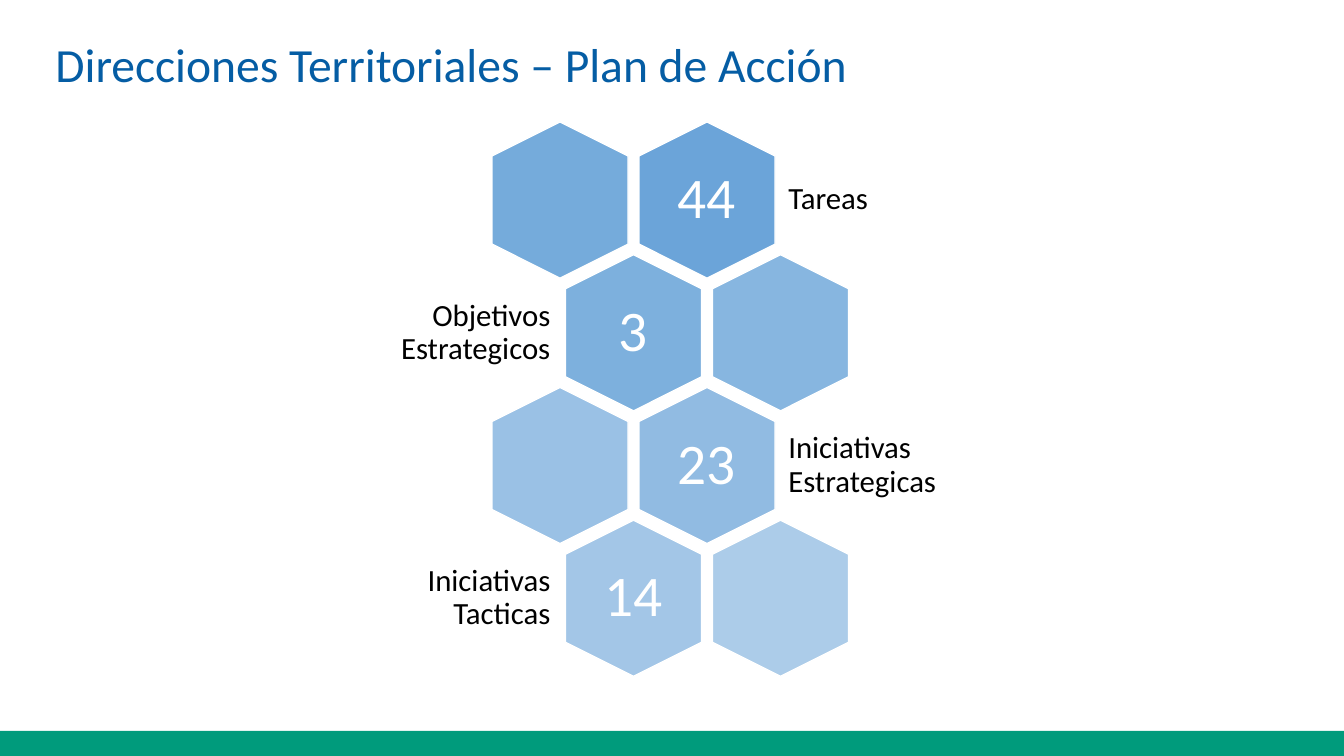
import pptx
import pptx.util
import pptx.dml.color
import pptx.enum.shapes
import pptx.enum.text
import pptx.oxml
import pptx.oxml.ns

Pt = pptx.util.Pt
RGB = pptx.dml.color.RGBColor
SHAPE = pptx.enum.shapes.MSO_SHAPE
ALIGN = pptx.enum.text.PP_ALIGN
ANCHOR = pptx.enum.text.MSO_ANCHOR
qn = pptx.oxml.ns.qn

GREEN = RGB(0x00, 0x9B, 0x7C)
NAVY = RGB(0x05, 0x5D, 0xA4)
TITLE_OUTLINE = RGB(0x32, 0x85, 0x9C)
BLUE = RGB(0x5B, 0x9B, 0xD5)
WHITE = RGB(0xFF, 0xFF, 0xFF)
BLACK = RGB(0x00, 0x00, 0x00)

FONT = "Calibri"
HEX_W, HEX_H = 111.6, 97.2
GRID_LEFT, GRID_TOP = 344.2, 94.3
HALF_STEP, ROW_STEP = 52.5, 94.8

ROWS = [
    ("44", "Tareas"),
    ("3", "Objetivos Estrategicos"),
    ("23", "Iniciativas Estrategicas"),
    ("14", "Iniciativas Tacticas"),
]


def add_run(p, text, size, color):
    r = p.add_run()
    r.text = text
    r.font.name = FONT
    r.font.size = Pt(size)
    r.font.color.rgb = color
    return r


def set_title(s, text):
    sp = s.shapes.title
    sp.left, sp.top, sp.width, sp.height = Pt(32.4), Pt(19.4), Pt(828), Pt(51.8)
    tf = sp.text_frame
    tf.auto_size = pptx.enum.text.MSO_AUTO_SIZE.NONE
    tf.vertical_anchor = ANCHOR.MIDDLE
    p = tf.paragraphs[0]
    p.alignment = ALIGN.LEFT
    r = add_run(p, text, 34, NAVY)
    outline = pptx.oxml.parse_xml(
        f'<a:ln {pptx.oxml.ns.nsdecls("a")} w="{Pt(0.75)}"><a:solidFill>'
        f'<a:srgbClr val="{TITLE_OUTLINE}"/></a:solidFill></a:ln>')
    r.font._element.insert(0, outline)


def add_footer_bar(s):
    sp = s.shapes.add_shape(SHAPE.RECTANGLE, 0, Pt(522), Pt(960), Pt(18))
    sp.shadow.inherit = False
    sp.fill.solid()
    sp.fill.fore_color.rgb = GREEN
    sp.line.fill.background()


def add_hexagon(group, half_steps, row, opacity):
    sp = group.shapes.add_shape(
        SHAPE.HEXAGON, Pt(GRID_LEFT + half_steps * HALF_STEP),
        Pt(GRID_TOP + row * ROW_STEP), Pt(HEX_W), Pt(HEX_H))
    sp.rotation = 90
    sp.shadow.inherit = False
    sp.fill.solid()
    sp.fill.fore_color.rgb = BLUE
    color = sp._element.spPr.find(qn("a:solidFill")).find(qn("a:srgbClr"))
    alpha = pptx.oxml.parse_xml(
        f'<a:alpha {pptx.oxml.ns.nsdecls("a")} val="{round(opacity * 1000)}"/>')
    color.append(alpha)
    sp.line.color.rgb = WHITE
    sp.line.width = Pt(1)


def add_text(group, box, text, size, color, align, inset):
    sp = group.shapes.add_textbox(*map(Pt, box))
    tf = sp.text_frame
    tf.word_wrap = True
    tf.vertical_anchor = ANCHOR.MIDDLE
    tf.margin_left = tf.margin_right = Pt(inset)
    tf.margin_top = tf.margin_bottom = Pt(inset)
    p = tf.paragraphs[0]
    p.alignment = align
    p.line_spacing = 0.9
    add_run(p, text, size, color)


def add_row(group, row, number, label):
    odd = row % 2
    number_col, blank_col = (1, 3) if odd else (2, 0)
    opacity = 90 - row * 80 / 7
    top = GRID_TOP + row * ROW_STEP
    number_left = GRID_LEFT + number_col * HALF_STEP + 22.3
    add_hexagon(group, number_col, row, opacity)
    add_text(group, (number_left, top + 10.1, 67, 77), number, 41, WHITE,
             ALIGN.CENTER, 12.2)
    label_left, label_width, align = (
        (279.4, 120.2, ALIGN.RIGHT) if odd else (556.6, 124.6, ALIGN.LEFT))
    add_text(group, (label_left, top + 15.1, label_width, 67), label, 22, BLACK,
             align, 6.5)
    add_hexagon(group, blank_col, row, opacity - 40 / 7)


def main():
    prs = pptx.Presentation()
    prs.slide_width, prs.slide_height = Pt(960), Pt(540)
    s = prs.slides.add_slide(prs.slide_layouts[5])
    add_footer_bar(s)
    set_title(s, "Direcciones Territoriales – Plan de Acción")
    group = s.shapes.add_group_shape()
    for row, (number, label) in enumerate(ROWS):
        add_row(group, row, number, label)
    prs.save("out.pptx")


if __name__ == "__main__":
    main()
